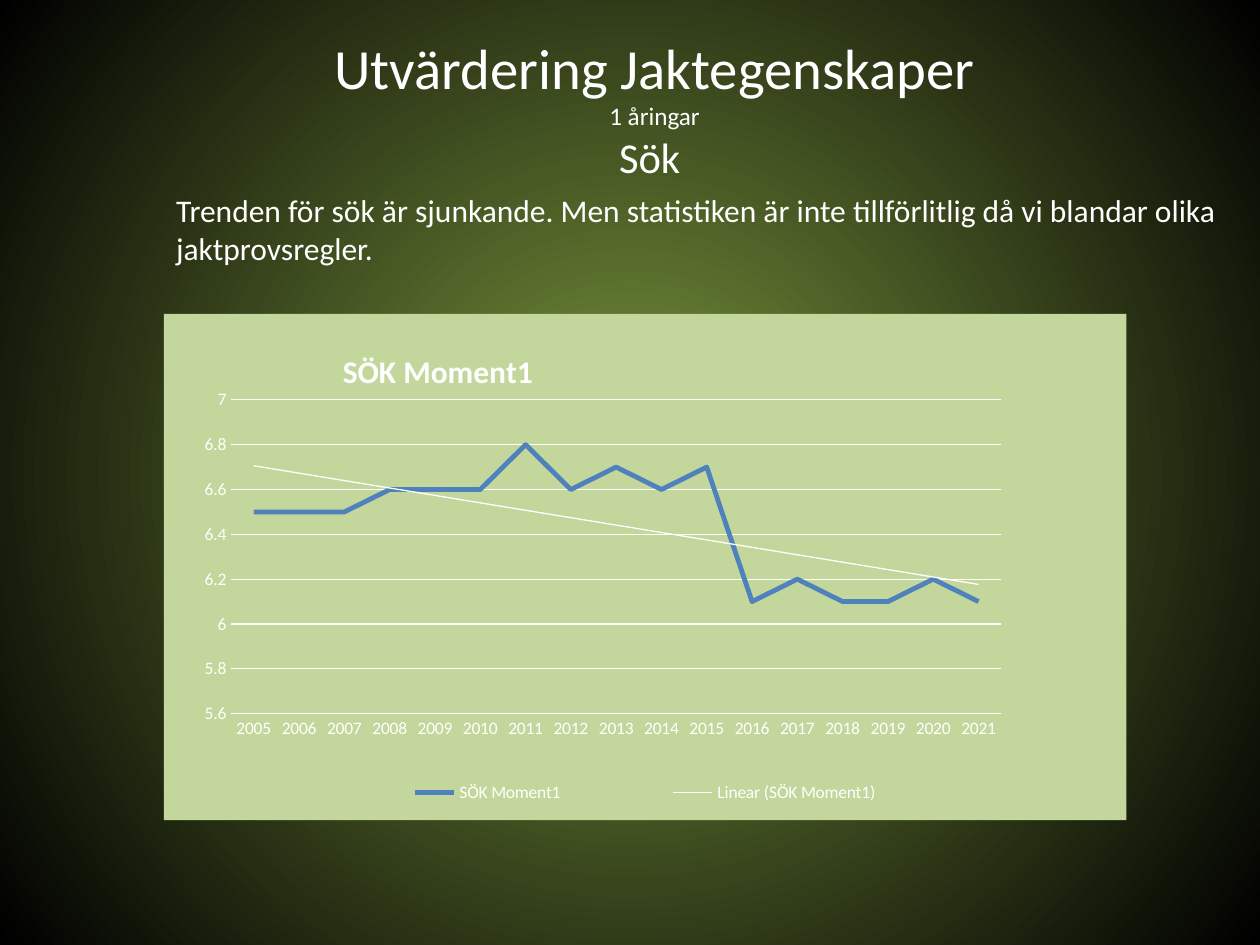
import pptx
import pptx.util
import pptx.chart.data
import pptx.dml.color
import pptx.enum.chart
import pptx.enum.text
import pptx.oxml
import pptx.oxml.ns
from pptx.util import Inches

COLORS = {"text": "FFFFFF", "glow": "77933C", "edge": "000000",
          "panel": "C3D69B", "search": "4F81BD"}
RGB = {role: pptx.dml.color.RGBColor.from_string(value) for role, value in COLORS.items()}
FONT = "Calibri"
Pt = pptx.util.Pt
qn = pptx.oxml.ns.qn


def xml(body):
    tag, rest = body[1:].split(">", 1)
    spaces = pptx.oxml.ns.nsdecls("a", "c")
    return pptx.oxml.parse_xml(f"<{tag} {spaces}>{rest}")


def place(element, index, x, y, w=None, h=None):
    for previous in element.findall(qn("c:layout")):
        element.remove(previous)
    modes = '<c:xMode val="edge"/><c:yMode val="edge"/>'
    sizes = "".join(f'<c:{key} val="{value}"/>' for key, value in
                    (("x", x), ("y", y), ("w", w), ("h", h)) if value is not None)
    target = '<c:layoutTarget val="inner"/>' if element.tag == qn("c:plotArea") else ""
    element.insert(index, xml(
        f"<c:layout><c:manualLayout>{target}{modes}{sizes}</c:manualLayout></c:layout>"))


deck = pptx.Presentation()
deck.slide_width, deck.slide_height = Inches(10), Inches(7.5)
slide = deck.slides.add_slide(deck.slide_layouts[5])

background = slide.background.fill
background.gradient()
for stop, role in zip(background.gradient_stops, ("glow", "edge")):
    stop.color.rgb = RGB[role]
direction = next(slide.element.iter(qn("a:lin")))
direction.getparent().replace(direction, xml(
    '<a:path><a:fillToRect l="50000" t="50000" r="50000" b="50000"/></a:path>'))
gradient_path = next(slide.element.iter(qn("a:path")))
gradient_path.set("path", "circle")

heading = slide.shapes.title
heading.left, heading.top = Inches(1.86), Inches(0.24)
heading.width, heading.height = Inches(6.67), Inches(1.22)
heading.text_frame.vertical_anchor = pptx.enum.text.MSO_ANCHOR.MIDDLE
heading_lines = heading.text_frame.paragraphs[0]
heading_lines.text = "Utvärdering Jaktegenskaper\v1 åringar\vSök "
heading_lines.alignment = pptx.enum.text.PP_ALIGN.CENTER
heading_sizes = (32.4, 14.4, 24.3)
for run, size in zip(heading_lines.runs, heading_sizes):
    run.font.size = Pt(size)
    run.font.name = FONT
    run.font.color.rgb = RGB["text"]
for line_break, size in zip(heading.element.iter(qn("a:br")), heading_sizes):
    line_break.append(xml("<a:rPr></a:rPr>"))
    line_break[0].set("sz", str(round(size * 100)))

comment = slide.shapes.add_textbox(Inches(1.3), Inches(1.47), Inches(8.46), Inches(0.71))
comment.text_frame.word_wrap = True
comment.text_frame.text = ("Trenden för sök är sjunkande. Men statistiken är inte tillförlitlig "
                           "då vi blandar olika jaktprovsregler.")
comment_font = comment.text_frame.paragraphs[0].runs[0].font
comment_font.size = Pt(18)
comment_font.name = FONT
comment_font.color.rgb = RGB["text"]

scores = pptx.chart.data.CategoryChartData(number_format="General")
scores.categories = [str(year) for year in range(2005, 2022)]
scores.add_series("SÖK Moment1", (6.5, 6.5, 6.5, 6.6, 6.6, 6.6, 6.8, 6.6, 6.7,
                                  6.6, 6.7, 6.1, 6.2, 6.1, 6.1, 6.2, 6.1))
trend_chart = slide.shapes.add_chart(
    pptx.enum.chart.XL_CHART_TYPE.LINE, Inches(1.3), Inches(2.49),
    Inches(7.64), Inches(4.02), scores).chart
trend_chart.font.size = Pt(10)
trend_chart.font.name = FONT
trend_chart.font.color.rgb = RGB["text"]

panel_fill = (f'<c:spPr><a:solidFill><a:srgbClr val="{COLORS["panel"]}"/></a:solidFill>'
              '<a:ln><a:noFill/></a:ln></c:spPr>')
chart_space = trend_chart.element
chart_space.find(qn("c:txPr")).addprevious(xml(panel_fill))
plot_area = next(chart_space.iter(qn("c:plotArea")))
plot_area.append(xml(panel_fill))
place(plot_area, 0, 0.07, 0.17, 0.8, 0.62)

trend_chart.has_title = True
chart_title = trend_chart.chart_title
chart_title.text_frame.text = "SÖK Moment1"
title_font = chart_title.text_frame.paragraphs[0].runs[0].font
title_font.size = Pt(18)
title_font.bold = True
title_font.name = FONT
title_font.color.rgb = RGB["text"]
place(next(chart_space.iter(qn("c:title"))), 1, 0.18, 0.06)

trend_chart.has_legend = True
trend_chart.legend.position = pptx.enum.chart.XL_LEGEND_POSITION.BOTTOM
trend_chart.legend.include_in_layout = False
place(next(chart_space.iter(qn("c:legend"))), 1, 0.15, 0.9, 0.7, 0.09)

years, score_axis = trend_chart.category_axis, trend_chart.value_axis
for axis in (years, score_axis):
    axis.major_tick_mark = pptx.enum.chart.XL_TICK_MARK.NONE
    axis.minor_tick_mark = pptx.enum.chart.XL_TICK_MARK.NONE
years.format.line.color.rgb = RGB["text"]
years.format.line.width = Pt(0.75)
score_axis.minimum_scale, score_axis.maximum_scale, score_axis.major_unit = 5.6, 7, 0.2
score_axis.format.line.fill.background()
score_axis.has_major_gridlines = True
score_axis.major_gridlines.format.line.color.rgb = RGB["text"]
score_axis.major_gridlines.format.line.width = Pt(0.75)

search = trend_chart.plots[0].series[0]
trend_chart.plots[0].vary_by_categories = False
search.smooth = False
search.format.line.color.rgb = RGB["search"]
search.format.line.width = Pt(2.75)
search.marker.style = pptx.enum.chart.XL_MARKER_STYLE.NONE
next(chart_space.iter(qn("c:cat"))).addprevious(xml(
    "<c:trendline><c:name>Linear (SÖK Moment1)</c:name><c:spPr><a:ln><a:solidFill>"
    f'<a:srgbClr val="{COLORS["text"]}"/></a:solidFill></a:ln></c:spPr>'
    '<c:trendlineType val="linear"/><c:dispRSqr val="0"/><c:dispEq val="0"/></c:trendline>'))

deck.save("out.pptx")
